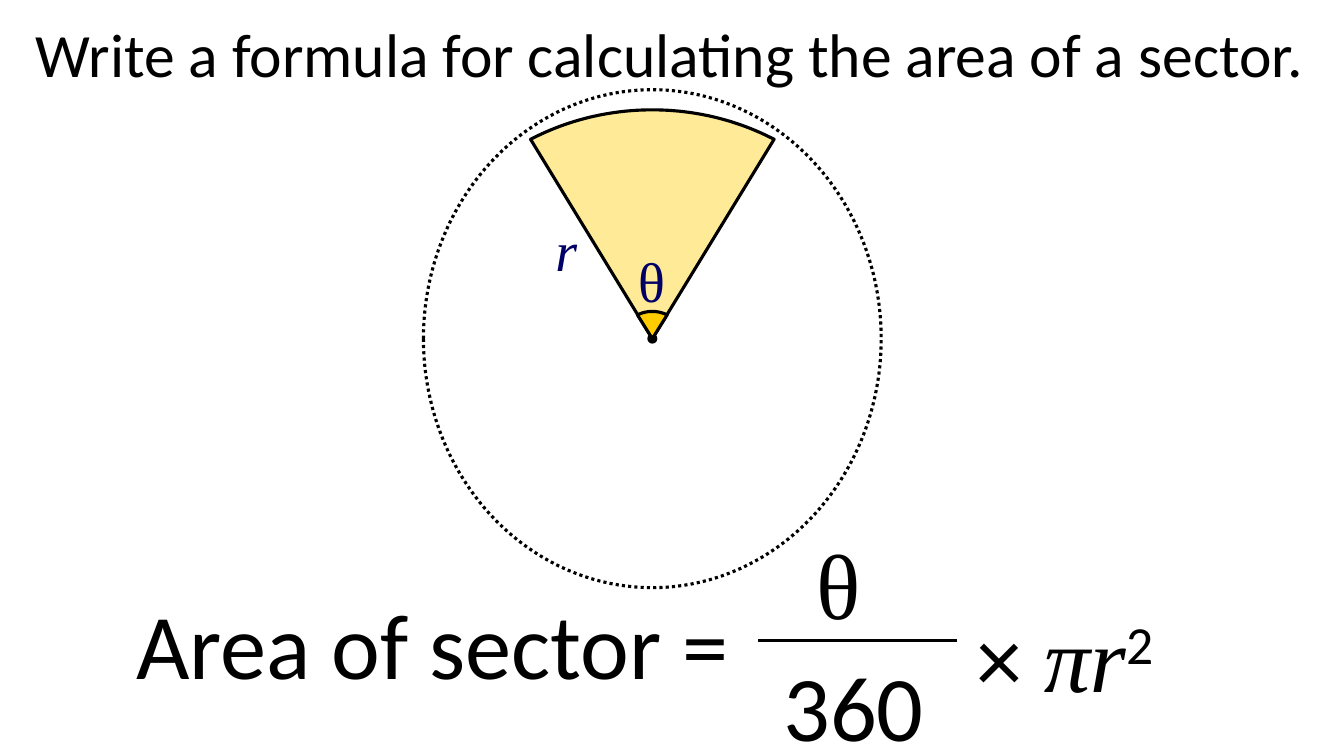
import math

from pptx import Presentation
from pptx.dml.color import RGBColor
from pptx.enum.dml import MSO_LINE
from pptx.enum.shapes import MSO_CONNECTOR, MSO_SHAPE
from pptx.enum.text import MSO_AUTO_SIZE, PP_ALIGN
from pptx.util import Inches, Pt
from lxml import etree

OVAL = MSO_SHAPE.OVAL
DOTTED = MSO_LINE.ROUND_DOT
STRAIGHT = MSO_CONNECTOR.STRAIGHT
GROW = MSO_AUTO_SIZE.SHAPE_TO_FIT_TEXT
CENTER, LEFT = PP_ALIGN.CENTER, PP_ALIGN.LEFT
DRAWING_NS = "http://schemas.openxmlformats.org/drawingml/2006/main"

COLORS = {"ink": "000000", "label": "010066", "sector": "FFEB97", "angle": "FFCC00"}
SANS, SERIF = "Calibri", "Times New Roman"

# Content: box, size, colour, alignment, wrap, spans of (text, font, italic, raised)
TEXTS = [
    ((0.15, 0.11, 12.99, 0.84), 44, "ink", CENTER, True,
     [("Write a formula for calculating the area of a sector.", SANS, False, False)]),
    ((5.41, 2.09, 0.5, 0.77), 40, "label", LEFT, True, [("r", SERIF, True, False)]),
    ((6.23, 2.4, 0.55, 0.77), 40, "label", LEFT, True, [("θ", SERIF, False, False)]),
    ((1.22, 5.78, 6.14, 1.21), 66, "ink", CENTER, False,
     [("Area of sector =", SANS, False, False)]),
    ((8, 5.18, 1, 1.21), 66, "ink", LEFT, True, [("θ", SERIF, False, False)]),
    ((7.67, 6.39, 2.25, 1.21), 66, "ink", LEFT, True, [("360", SANS, False, False)]),
    ((9.59, 5.9, 2.49, 1.21), 66, "ink", LEFT, True,
     [("× ", SANS, False, False), ("πr", SERIF, True, False), ("2", SANS, False, True)]),
]
CENTRE = (6.47, 3.36)
HALF_ANGLE = 29.4  # degrees either side of vertical
ARC_STEPS = 48
SECTOR_RADII = (2.46, 2.27)
ANGLE_RADII = (0.3, 0.27)
CIRCLE_RADII = (2.27, 2.47)
DOT_RADII = (0.05, 0.05)
FRACTION_BAR = (7.52, 9.49, 6.35)  # left, right, height on the slide


def color(name):
    return RGBColor.from_string(COLORS[name])


def style(shape, fill=None, line=True):
    shape.shadow.inherit = False
    if fill:
        shape.fill.solid()
        shape.fill.fore_color.rgb = color(fill)
    else:
        shape.fill.background()
    if line:
        shape.line.color.rgb = color("ink")
        shape.line.width = Pt(2.25)
    else:
        shape.line.fill.background()


def add_sector(page, radii, fill):
    """Draw a wedge that opens upwards from the centre."""
    points = []
    for step in range(ARC_STEPS + 1):
        turn = math.radians(HALF_ANGLE * (1 - 2 * step / ARC_STEPS))
        points.append((Inches(CENTRE[0] + radii[0] * math.sin(turn)),
                       Inches(CENTRE[1] - radii[1] * math.cos(turn))))
    builder = page.shapes.build_freeform(*[Inches(c) for c in CENTRE])
    builder.add_line_segments(points, close=True)
    style(builder.convert_to_shape(), fill)


def add_oval(page, radii):
    corner = [Inches(c - r) for c, r in zip(CENTRE, radii)]
    return page.shapes.add_shape(OVAL, *corner, *[Inches(2 * r) for r in radii])


def add_text(page, place, size, ink, align, wrap, spans):
    box = page.shapes.add_textbox(*[Inches(length) for length in place])
    frame = box.text_frame
    frame.word_wrap = wrap
    frame.auto_size = GROW
    para = frame.paragraphs[0]
    para.alignment = align
    para.font.size = Pt(size)
    para.font.color.rgb = color(ink)
    for text, font, italic, raised in spans:
        span = para.add_run()
        span.text = text
        span.font.name = font
        span.font.italic = italic
        if raised:
            span._r.get_or_add_rPr().set("baseline", "30000")


def main():
    deck = Presentation()
    deck.slide_width, deck.slide_height = Inches(13.33), Inches(7.5)
    page = deck.slides.add_slide(deck.slide_layouts[6])

    # Circle with its sector, angle and centre
    add_sector(page, SECTOR_RADII, "sector")
    circle = add_oval(page, CIRCLE_RADII)
    style(circle)
    circle.line.dash_style = DOTTED
    style(add_oval(page, DOT_RADII), "ink", line=False)
    add_sector(page, ANGLE_RADII, "angle")

    # Title, labels and formula
    for entry in TEXTS:
        add_text(page, *entry)

    # Fraction bar
    left, right, level = [Inches(length) for length in FRACTION_BAR]
    bar = page.shapes.add_connector(STRAIGHT, left, level, right, level)
    bar.line.color.rgb = color("ink")
    bar.line.width = Pt(2.25)
    etree.SubElement(bar._element.spPr, f"{{{DRAWING_NS}}}effectLst")

    deck.save("out.pptx")


if __name__ == "__main__":
    main()
